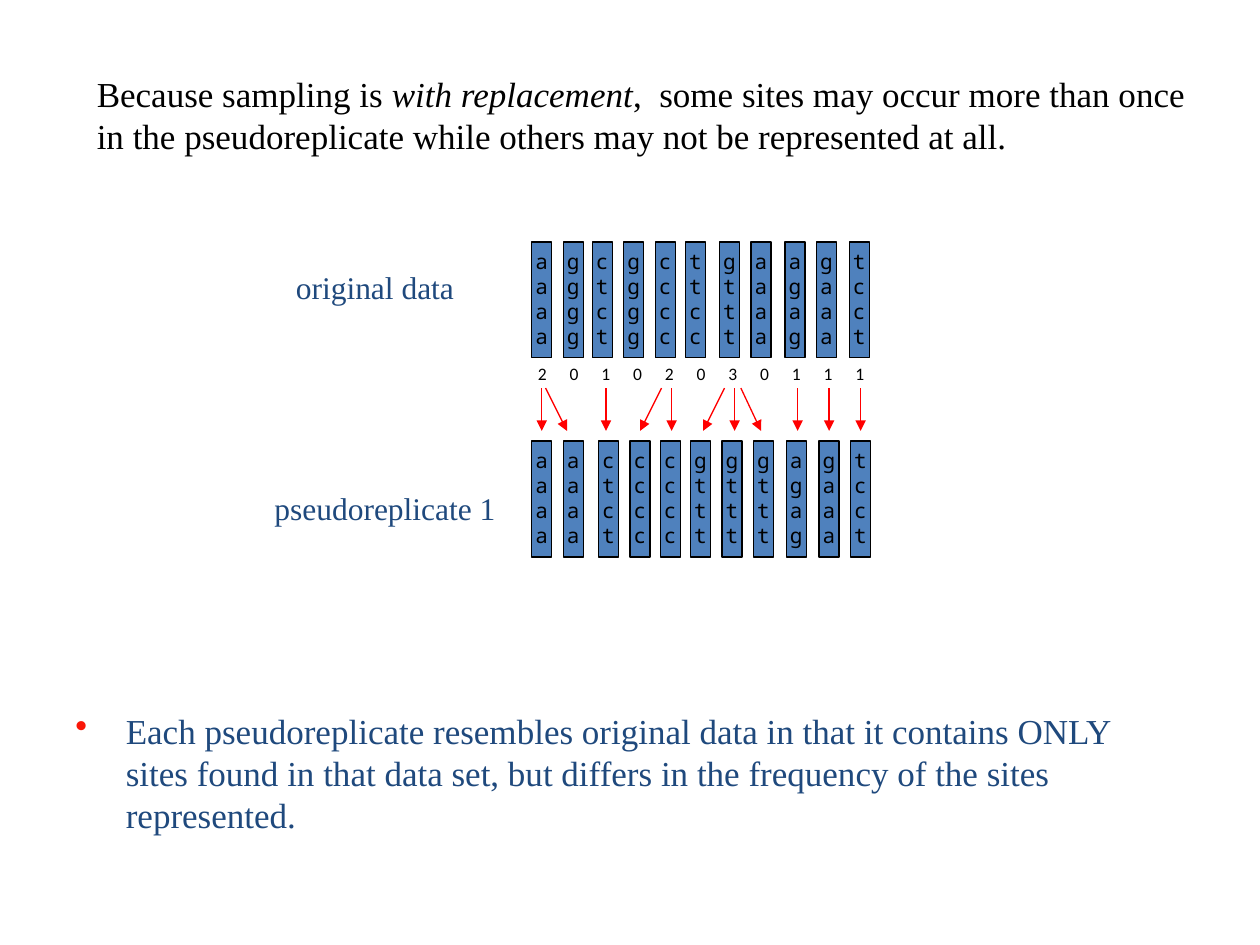
from lxml import etree
from pptx import Presentation
from pptx.dml.color import RGBColor
from pptx.enum.shapes import MSO_CONNECTOR, MSO_SHAPE
from pptx.enum.text import MSO_ANCHOR, PP_ALIGN
from pptx.oxml.ns import qn
from pptx.util import Inches, Pt

STRAIGHT = MSO_CONNECTOR.STRAIGHT
RECTANGLE = MSO_SHAPE.RECTANGLE
TOP, MIDDLE = MSO_ANCHOR.TOP, MSO_ANCHOR.MIDDLE
LEFT, CENTER = PP_ALIGN.LEFT, PP_ALIGN.CENTER

BLACK = RGBColor(0x00, 0x00, 0x00)
NAVY = RGBColor(0x1F, 0x49, 0x7D)
BLUE = RGBColor(0x4F, 0x81, 0xBD)
RED = RGBColor(0xFF, 0x00, 0x00)
BULLET_RED = "FA1708"
SERIF, SANS, MONO = "Times New Roman", "Calibri", "Noto Sans Mono"

STRIP_WIDTH, STRIP_HEIGHT = 0.16, 0.92

# Each alignment column: left edge and its four bases
ORIGINAL_SITES = [
    (4.22, "aaaa"), (4.47, "gggg"), (4.7, "ctct"), (4.95, "gggg"),
    (5.2, "cccc"), (5.44, "ttcc"), (5.71, "gttt"), (5.96, "aaaa"),
    (6.23, "agag"), (6.48, "gaaa"), (6.74, "tcct"),
]
PSEUDOREPLICATE_SITES = [
    (4.22, "aaaa"), (4.47, "aaaa"), (4.75, "ctct"), (5, "cccc"),
    (5.24, "cccc"), (5.48, "gttt"), (5.73, "gttt"), (5.98, "gttt"),
    (6.24, "agag"), (6.5, "gaaa"), (6.75, "tcct"),
]
SAMPLE_COUNTS = "20102030111"

# Horizontal start and end of each sampling arrow
ARROWS = [
    (4.3, 4.3), (4.33, 4.5), (4.81, 4.81), (5.25, 5.08), (5.33, 5.33),
    (5.75, 5.58), (5.83, 5.83), (5.88, 6.04), (6.33, 6.33), (6.58, 6.58),
    (6.83, 6.83),
]


def add_text(slide, box, runs, size, font, color, wrap=True, anchor=TOP):
    """Place one paragraph made of (text, italic) runs; return it."""
    shape = slide.shapes.add_textbox(*map(Inches, box))
    frame = shape.text_frame
    frame.word_wrap = wrap
    frame.vertical_anchor = anchor
    paragraph = frame.paragraphs[0]
    paragraph.alignment = LEFT
    paragraph.font.size = Pt(size)
    paragraph.font.name = font
    paragraph.font.color.rgb = color
    for text, italic in runs:
        run = paragraph.add_run()
        run.text = text
        if italic:
            run.font.italic = True
    return paragraph


def add_title(slide, box):
    runs = [
        ("Because sampling is ", False),
        ("with replacement", True),
        (",  some sites may occur more than once in the pseudoreplicate "
         "while others may not be represented at all.", False),
    ]
    add_text(slide, box, runs, 20, SERIF, BLACK, anchor=MIDDLE)


def add_conclusion(slide, box):
    text = ("Each pseudoreplicate resembles original data in that it contains "
            "ONLY sites found in that data set, but differs in the frequency "
            "of the sites represented.")
    paragraph = add_text(slide, box, [(text, False)], 20, SERIF, NAVY)

    # Hanging red bullet
    properties = paragraph._p.get_or_add_pPr()
    properties.set("marL", str(Inches(0.4)))
    properties.set("indent", str(-Inches(0.4)))
    bullet_color = etree.Element(qn("a:buClr"))
    etree.SubElement(bullet_color, qn("a:srgbClr"), val=BULLET_RED)
    bullet = etree.Element(qn("a:buChar"), char="•")
    properties.insert(0, bullet_color)
    properties.insert(1, bullet)


def add_strip(slide, left, top, bases):
    """One site: a narrow box in which each base wraps onto its own line."""
    strip = slide.shapes.add_shape(
        RECTANGLE, Inches(left), Inches(top),
        Inches(STRIP_WIDTH), Inches(STRIP_HEIGHT))
    strip.shadow.inherit = False
    strip.fill.solid()
    strip.fill.fore_color.rgb = BLUE
    strip.line.color.rgb = BLACK
    strip.line.width = Pt(0.75)
    frame = strip.text_frame
    frame.word_wrap = True
    frame.vertical_anchor = TOP
    frame.margin_left = frame.margin_right = frame.margin_bottom = 0
    frame.margin_top = Inches(0.05)
    paragraph = frame.paragraphs[0]
    paragraph.text = bases
    paragraph.alignment = CENTER
    paragraph.font.size = Pt(12)
    paragraph.font.name = MONO
    paragraph.font.color.rgb = BLACK


def add_alignment(slide, top, sites, label, label_box):
    for left, bases in sites:
        add_strip(slide, left, top, bases)
    add_text(slide, label_box, [(label, False)], 18, SERIF, NAVY, wrap=False)


def add_counts(slide, box):
    left, top, width, height = box
    cell = 0.27
    pitch = (width - cell) / (len(SAMPLE_COUNTS) - 1)
    for index, count in enumerate(SAMPLE_COUNTS):
        add_text(slide, (left + index * pitch, top, cell, height),
                 [(count, False)], 10, SANS, BLACK, wrap=False)


def add_arrows(slide, top, bottom):
    for start, end in ARROWS:
        arrow = slide.shapes.add_connector(
            STRAIGHT, Inches(start), Inches(top), Inches(end), Inches(bottom))
        arrow.line.color.rgb = RED
        arrow.line.width = Pt(0.75)
        etree.SubElement(arrow.line._get_or_add_ln(), qn("a:tailEnd"),
                         type="triangle")
        etree.SubElement(arrow._element.spPr, qn("a:effectLst"))


def main():
    presentation = Presentation()
    presentation.slide_width = Inches(10)
    presentation.slide_height = Inches(7.5)
    slide = presentation.slides.add_slide(presentation.slide_layouts[6])

    add_title(slide, (0.67, 0.42, 8.93, 0.97))
    add_conclusion(slide, (0.5, 5.58, 8.92, 1.33))
    add_alignment(slide, 1.92, ORIGINAL_SITES,
                  "original data", (2.25, 2.08, 1.46, 0.4))
    add_counts(slide, (4.17, 2.83, 2.79, 0.27))
    add_arrows(slide, 3.08, 3.42)
    add_alignment(slide, 3.5, PSEUDOREPLICATE_SITES,
                  "pseudoreplicate 1", (2.08, 3.83, 1.96, 0.4))

    presentation.save("out.pptx")


if __name__ == "__main__":
    main()
